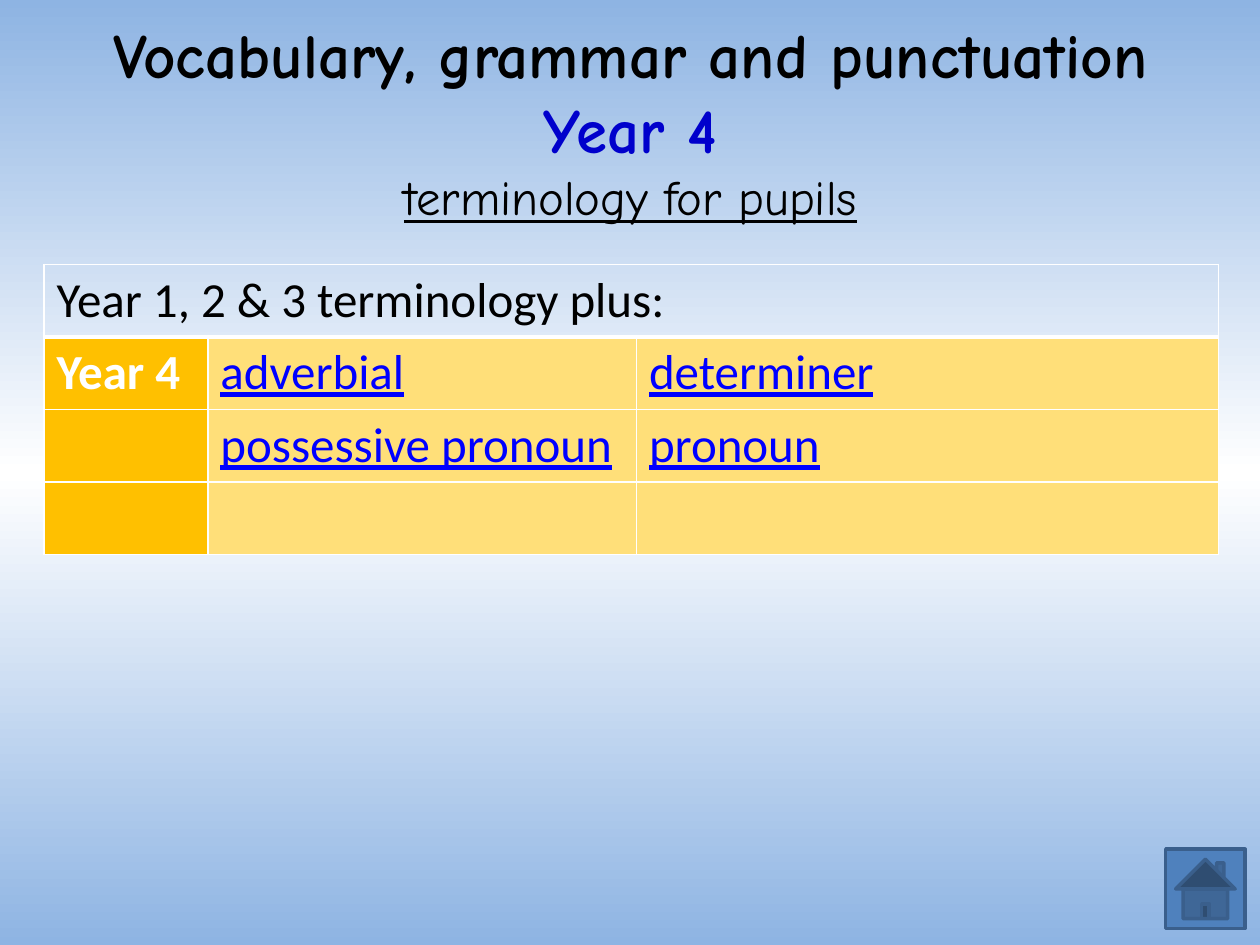
import copy

import pptx
import pptx.dml.color
import pptx.enum.shapes
import pptx.enum.text
import pptx.oxml
import pptx.oxml.ns
import pptx.util
from pptx.util import Cm

TITLE_RUNS = [
    ("Vocabulary, grammar and punctuation ", dict(size=36, color="000000", bold=True)),
    ("Year 4\v", dict(size=36, color="0000CC", bold=True)),
    ("terminology for pupils", dict(size=27.9, color="000000", underline=True)),
]
HEADING = "Year 1, 2 & 3 terminology plus:"
TERMS = [
    ("Year 4", "adverbial", "determiner"),
    ("", "possessive pronoun", "pronoun"),
    ("", "", ""),
]
COLUMN_WIDTHS = [3.3, 8.64, 11.73]
ROW_HEIGHT = 1.46
BACKGROUND_STOPS = [(0, "8EB4E3"), (0.5, "FFFFFF"), (1, "8EB4E3")]


def rgb(value):
    return pptx.dml.color.RGBColor.from_string(value)


def add_text(paragraph, text, size=28, color="000000", font="Calibri",
             bold=False, underline=False):
    """Append text to the paragraph; a vertical tab ends the line."""
    words, *line_break = text.split("\v")
    run = paragraph.add_run()
    run.text = words
    run.font.size = pptx.util.Pt(size)
    run.font.name = font
    run.font.bold = bold
    run.font.underline = underline
    run.font.color.rgb = rgb(color)
    if line_break:
        paragraph.add_line_break()


def set_borders(cell, **widths):
    """Draw white borders; each width in points, keyed by side L, R, T or B."""
    properties = cell._tc.get_or_add_tcPr()
    for side in "LRTB":
        properties.append(pptx.oxml.parse_xml(
            f'<a:ln{side} {pptx.oxml.ns.nsdecls("a")} '
            f'w="{pptx.util.Pt(widths.get(side, 1))}">'
            f'<a:solidFill><a:srgbClr val="FFFFFF"/></a:solidFill></a:ln{side}>'))


def paint_background(slide):
    fill = slide.background.fill
    fill.gradient()
    fill.gradient_angle = 90
    first = fill.gradient_stops[0]._gs
    first.getparent().append(copy.deepcopy(first))
    for stop, (position, color) in zip(fill.gradient_stops, BACKGROUND_STOPS):
        stop.position = position
        stop.color.rgb = rgb(color)


def add_home_button(slide):
    home = slide.shapes.add_shape(
        pptx.enum.shapes.MSO_SHAPE.ACTION_BUTTON_HOME,
        Cm(23.5), Cm(17.12), Cm(1.6), Cm(1.6))
    home.shadow.inherit = False
    home.fill.solid()
    home.fill.fore_color.rgb = rgb("4F81BD")
    home.line.color.rgb = rgb("3A5F8C")
    home.line.width = pptx.util.Pt(2)


def fill_title(title):
    title.left, title.top, title.width, title.height = Cm(0.71), Cm(0.33), Cm(24), Cm(4.19)
    frame = title.text_frame
    frame.word_wrap = True
    frame.auto_size = pptx.enum.text.MSO_AUTO_SIZE.NONE
    frame.vertical_anchor = pptx.enum.text.MSO_ANCHOR.MIDDLE
    heading = frame.paragraphs[0]
    heading.alignment = pptx.enum.text.PP_ALIGN.CENTER
    for text, style in TITLE_RUNS:
        add_text(heading, text, font="Comic Neue", **style)


def add_terms_table(slide):
    row_count = len(TERMS) + 1
    terms = slide.shapes.add_table(
        row_count, len(COLUMN_WIDTHS), Cm(0.89), Cm(5.33),
        Cm(sum(COLUMN_WIDTHS)), Cm(ROW_HEIGHT * row_count)).table
    terms.first_row = terms.horz_banding = False
    for column, width in zip(terms.columns, COLUMN_WIDTHS):
        column.width = Cm(width)
    for row in terms.rows:
        row.height = Cm(ROW_HEIGHT)

    for cell in terms.rows[0].cells:
        set_borders(cell, B=3)
        cell.fill.background()
    terms.cell(0, 0).merge(terms.cell(0, len(COLUMN_WIDTHS) - 1))
    add_text(terms.cell(0, 0).text_frame.paragraphs[0], HEADING)

    for r, words in enumerate(TERMS, start=1):
        for c, word in enumerate(words):
            cell = terms.cell(r, c)
            set_borders(cell, T=3 if r == 1 else 1)
            cell.fill.solid()
            cell.fill.fore_color.rgb = rgb("FFDF79" if c else "FFC000")
            paragraph = cell.text_frame.paragraphs[0]
            if word and c:
                add_text(paragraph, word, color="0000FF", underline=True)
            elif word:
                add_text(paragraph, word, color="FFFFFF", bold=True)


def main():
    deck = pptx.Presentation()
    deck.slide_width, deck.slide_height = Cm(25.4), Cm(19.05)
    slide = deck.slides.add_slide(deck.slide_layouts[5])
    paint_background(slide)
    add_home_button(slide)
    fill_title(slide.shapes.title)
    add_terms_table(slide)
    deck.save("out.pptx")


if __name__ == "__main__":
    main()
